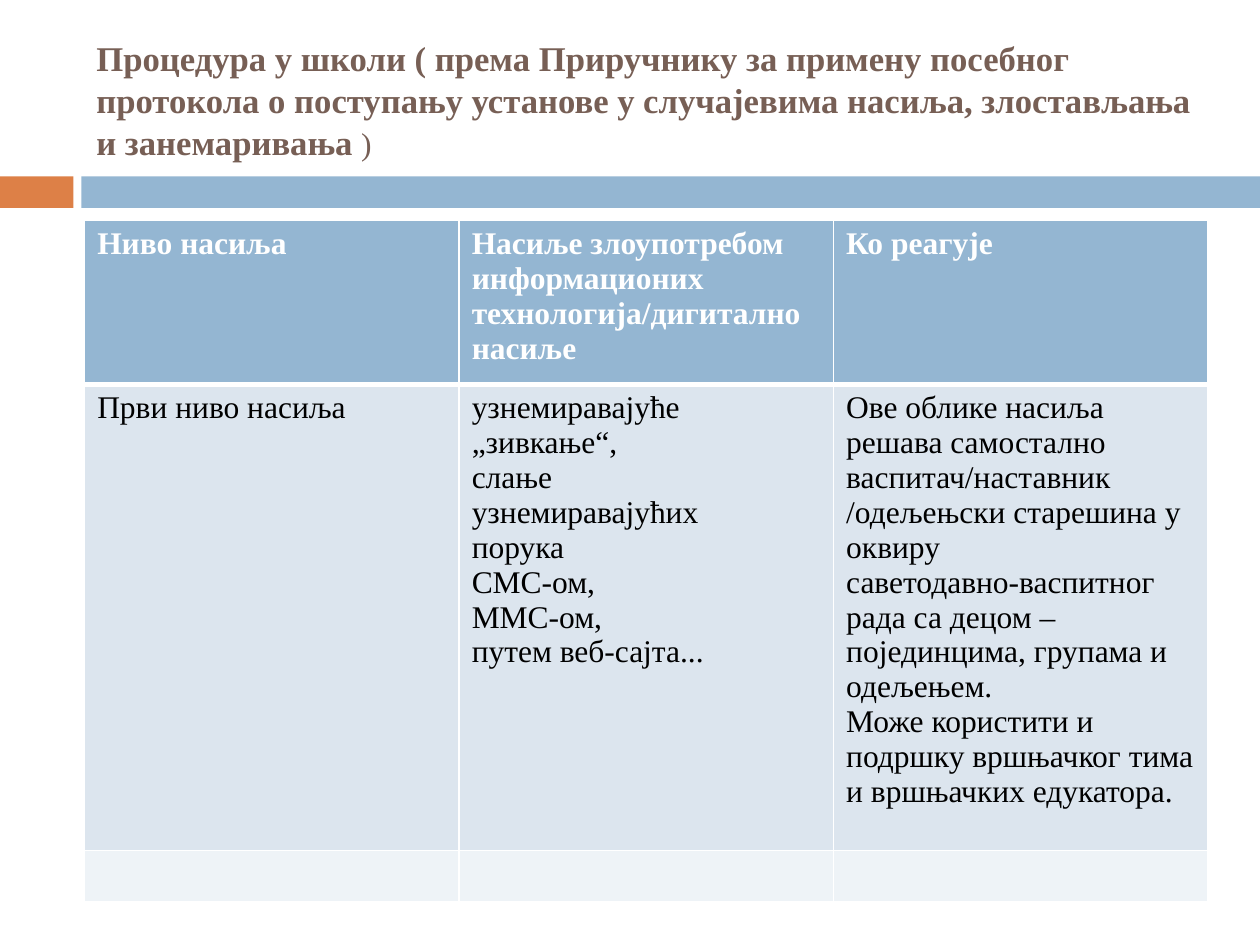
from dataclasses import dataclass

from lxml import etree
from pptx import Presentation
from pptx.dml.color import RGBColor
from pptx.enum import shapes, text
from pptx.oxml import ns
from pptx.util import Pt


@dataclass(frozen=True)
class Theme:
    font: str = "Times New Roman"
    title: str = "775F55"
    accent: str = "DD8047"
    header: str = "94B6D2"
    bands: tuple = ("DCE5EE", "EEF3F7")
    light: str = "FFFFFF"
    dark: str = "000000"
    title_size: float = 19.8
    body_size: float = 18


THEME = Theme()

TITLE = ("Процедура у школи ( према Приручнику за примену посебног протокола о "
         "поступању установе у случајевима насиља, злостављања и занемаривања ")

ROWS = [
    [["Ниво насиља"],
     ["Насиље злоупотребом информационих технологија/дигитално насиље"],
     ["Ко реагује"]],
    [["Први ниво насиља"],
     ["узнемиравајуће", "„зивкање“,", "слање", "узнемиравајућих", "порука",
      "СМС-ом,", "ММС-ом,", "путем веб-сајта..."],
     ["Ове облике насиља решава самостално васпитач/наставник "
      "/одељењски старешина у оквиру",
      "саветодавно-васпитног рада са децом – појединцима, групама и одељењем.",
      "Може користити и подршку вршњачког тима и вршњачких едукатора."]],
    [[""], [""], [""]],
]
ROW_HEIGHTS = (86.4, 246.6, 29.2)


def add_run(p, content, size, color, bold=False):
    r = p.add_run()
    r.text = content
    for name, value in dict(name=THEME.font, size=Pt(size), bold=bold).items():
        setattr(r.font, name, value)
    r.font.color.rgb = RGBColor.from_string(color)


def add_bar(s, left, width, color):
    sp = s.shapes.add_shape(shapes.MSO_SHAPE.RECTANGLE,
                            Pt(left), Pt(100.8), Pt(width), Pt(18))
    sp.shadow.inherit = False
    sp.fill.solid()
    sp.fill.fore_color.rgb = RGBColor.from_string(color)
    sp.line.fill.background()


def add_title(s):
    tf = s.shapes.add_textbox(Pt(48), Pt(18), Pt(642), Pt(78)).text_frame
    tf.word_wrap = True
    tf.vertical_anchor = text.MSO_ANCHOR.MIDDLE
    p = tf.paragraphs[0]
    p.line_spacing = Pt(24)
    add_run(p, TITLE, THEME.title_size, THEME.title, bold=True)
    add_run(p, ")", THEME.body_size, THEME.title)


def set_borders(cell, **widths):
    """Draw light cell borders; the keys are L, R, T and B, the widths in points."""
    pr = cell._tc.get_or_add_tcPr()
    for side, width in widths.items():
        ln = etree.SubElement(pr, ns.qn(f"a:ln{side}"), w=str(Pt(width)))
        fill = etree.SubElement(ln, ns.qn("a:solidFill"))
        etree.SubElement(fill, ns.qn("a:srgbClr"), val=THEME.light)


def fill_cell(cell, paragraphs, row):
    header = row == 0
    set_borders(cell, L=1, R=1, T=3 if row == 1 else 1, B=3 if header else 1)
    cell.fill.solid()
    cell.fill.fore_color.rgb = RGBColor.from_string(
        THEME.header if header else THEME.bands[row - 1])
    tf = cell.text_frame
    for i, content in enumerate(paragraphs):
        p = tf.add_paragraph() if i else tf.paragraphs[0]
        if content:
            add_run(p, content, THEME.body_size,
                    THEME.light if header else THEME.dark, bold=header)


def add_levels_table(s):
    table = s.shapes.add_table(len(ROWS), len(ROWS[0]), Pt(48.4), Pt(126),
                               Pt(642), Pt(sum(ROW_HEIGHTS))).table
    for row, (cells, height) in enumerate(zip(ROWS, ROW_HEIGHTS)):
        table.rows[row].height = Pt(height)
        for col, paragraphs in enumerate(cells):
            fill_cell(table.cell(row, col), paragraphs, row)


def main():
    prs = Presentation()
    prs.slide_width, prs.slide_height = Pt(720), Pt(540)
    s = prs.slides.add_slide(prs.slide_layouts[6])
    add_bar(s, 0, 42, THEME.accent)
    add_bar(s, 46.5, 673.5, THEME.header)
    add_title(s)
    add_levels_table(s)
    prs.save("out.pptx")


if __name__ == "__main__":
    main()
